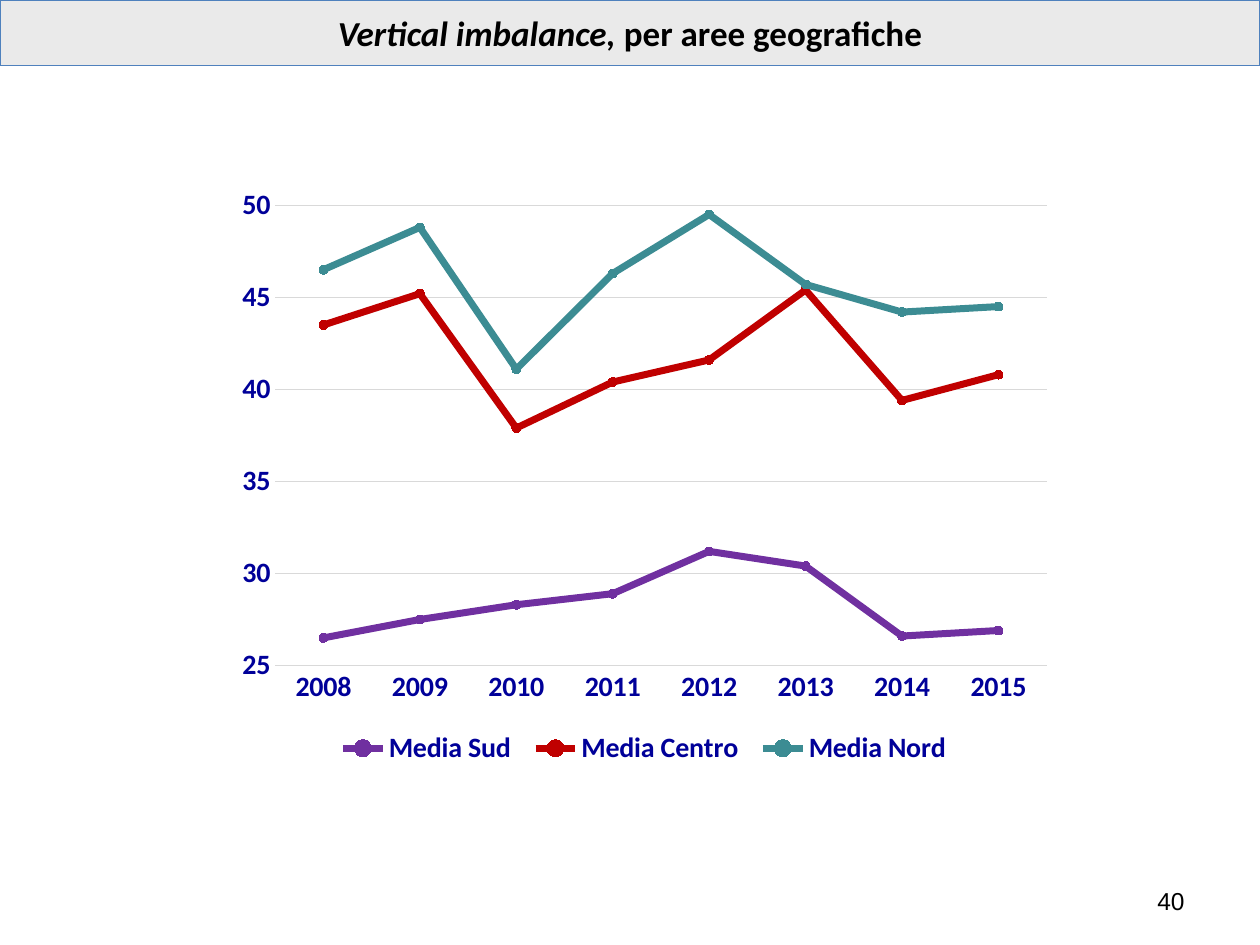
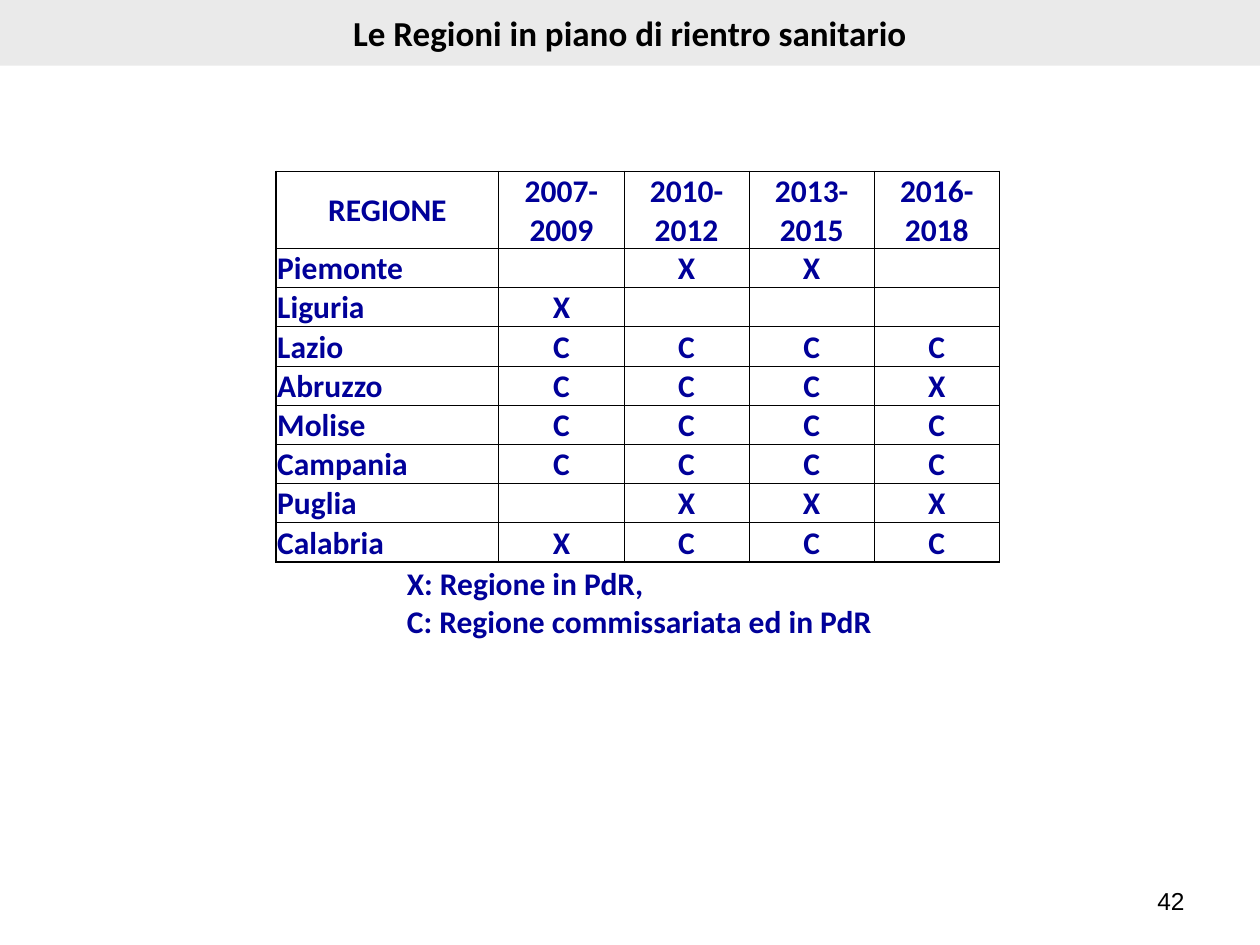
from dataclasses import dataclass

from lxml import etree
from pptx import Presentation
from pptx.chart.data import CategoryChartData
from pptx.dml.color import RGBColor
from pptx.enum.chart import XL_CHART_TYPE, XL_LEGEND_POSITION, XL_MARKER_STYLE, XL_TICK_MARK
from pptx.enum.shapes import MSO_SHAPE
from pptx.enum.text import MSO_ANCHOR, PP_ALIGN
from pptx.oxml.ns import qn
from pptx.util import Pt

LINE_MARKERS = XL_CHART_TYPE.LINE_MARKERS
LEGEND_BOTTOM = XL_LEGEND_POSITION.BOTTOM
CIRCLE = XL_MARKER_STYLE.CIRCLE
NO_TICK = XL_TICK_MARK.NONE
RECTANGLE = MSO_SHAPE.RECTANGLE
MIDDLE = MSO_ANCHOR.MIDDLE
LEFT, CENTER, RIGHT = PP_ALIGN.LEFT, PP_ALIGN.CENTER, PP_ALIGN.RIGHT


@dataclass(frozen=True)
class Theme:
    black: RGBColor = RGBColor.from_string("000000")
    navy: RGBColor = RGBColor.from_string("000099")
    band: RGBColor = RGBColor.from_string("EAEAEA")
    band_edge: RGBColor = RGBColor.from_string("4F81BD")
    grid: RGBColor = RGBColor.from_string("D9D9D9")
    south: RGBColor = RGBColor.from_string("7030A0")
    centre: RGBColor = RGBColor.from_string("C00000")
    north: RGBColor = RGBColor.from_string("3C8C93")
    body_font: str = "Calibri"
    number_font: str = "Arial"
    title_size: int = 20
    table_size: int = 18
    chart_size: int = 16
    number_size: int = 14


theme = Theme()


def style(font, size, color, name=theme.body_font, bold=True):
    font.name, font.size, font.bold = name, Pt(size), bold
    font.color.rgb = color


def add_framed_slide(prs, title_runs, number):
    """Add a slide with its title band and page number; title_runs holds (text, italic) pairs."""
    s = prs.slides.add_slide(prs.slide_layouts[6])
    band = s.shapes.add_shape(RECTANGLE, 0, 0, prs.slide_width, Pt(37.5))
    band.shadow.inherit = False
    band.fill.solid()
    band.fill.fore_color.rgb = theme.band
    band.line.fill.background()
    tf = band.text_frame
    tf.vertical_anchor = MIDDLE
    p = tf.paragraphs[0]
    p.alignment = CENTER
    for text, italic in title_runs:
        r = p.add_run()
        r.text = text
        style(r.font, theme.title_size, theme.black)
        r.font.italic = italic

    tf = s.shapes.add_textbox(Pt(516), Pt(500.4), Pt(168), Pt(28.8)).text_frame
    tf.word_wrap = True
    tf.vertical_anchor = MIDDLE
    p = tf.paragraphs[0]
    p.text = number
    p.alignment = RIGHT
    style(p.runs[0].font, theme.number_size, theme.black, theme.number_font, False)
    return s, band


prs = Presentation()
prs.slide_width, prs.slide_height = Pt(720), Pt(540)

# Slide 1: line chart by area
s, band = add_framed_slide(
    prs, [("Vertical imbalance, ", True), ("per aree geografiche", False)], "40")
band.line.color.rgb = theme.band_edge
band.line.width = Pt(0.75)

areas = [
    ("Media Sud ", theme.south, (26.5, 27.5, 28.3, 28.9, 31.2, 30.4, 26.6, 26.9)),
    ("Media Centro ", theme.centre, (43.5, 45.2, 37.9, 40.4, 41.6, 45.4, 39.4, 40.8)),
    ("Media Nord", theme.north, (46.5, 48.8, 41.1, 46.3, 49.5, 45.7, 44.2, 44.5)),
]
data = CategoryChartData()
data.categories = [str(year) for year in range(2008, 2016)]
for name, color, values in areas:
    data.add_series(name, values)
chart = s.shapes.add_chart(
    LINE_MARKERS, Pt(128.9), Pt(100.8), Pt(478.8), Pt(339.8), data).chart
style(chart.font, theme.chart_size, theme.navy)
chart.has_title = False
chart.has_legend = True
chart.legend.position = LEGEND_BOTTOM
chart.legend.include_in_layout = False
style(chart.legend.font, theme.chart_size, theme.navy)

for axis in (chart.category_axis, chart.value_axis):
    axis.major_tick_mark = axis.minor_tick_mark = NO_TICK
    style(axis.tick_labels.font, theme.chart_size, theme.navy)
value_axis = chart.value_axis
value_axis.minimum_scale, value_axis.maximum_scale = 25, 50
value_axis.major_unit = 5
value_axis.tick_labels.number_format = "0"
value_axis.tick_labels.number_format_is_linked = False
value_axis.format.line.fill.background()
for line in (chart.category_axis.format.line, value_axis.major_gridlines.format.line):
    line.color.rgb = theme.grid
    line.width = Pt(0.75)

chart.plots[0].vary_by_categories = False
for series, (name, color, values) in zip(chart.plots[0].series, areas):
    series.smooth = False
    series.format.line.color.rgb = color
    series.format.line.width = Pt(4)
    marker = series.marker
    marker.style, marker.size = CIRCLE, 5
    marker.format.fill.solid()
    marker.format.fill.fore_color.rgb = color
    marker.format.line.color.rgb = color

# Slide 2: table of regions
s, band = add_framed_slide(prs, [("Le Regioni in piano di rientro sanitario", False)], "42")

rows = [
    ("REGIONE", "2007-2009", "2010-2012", "2013-2015", "2016-2018"),
    ("Piemonte", "", "X", "X", ""),
    ("Liguria", "X", "", "", ""),
    ("Lazio", "C", "C", "C", "C"),
    ("Abruzzo", "C", "C", "C", "X"),
    ("Molise", "C", "C", "C", "C"),
    ("Campania", "C", "C", "C", "C"),
    ("Puglia", "", "X", "X", "X"),
    ("Calabria", "X", "C", "C", "C"),
]
last_row, last_col = len(rows) - 1, len(rows[0]) - 1
table = s.shapes.add_table(
    len(rows), len(rows[0]), Pt(157.7), Pt(98), Pt(413.4), Pt(222.8)).table
table.first_row = table.horz_banding = False
for i, column in enumerate(table.columns):
    column.width = Pt(71.5 if i else 127.4)
for i, row in enumerate(table.rows):
    row.height = Pt(22.4 if i else 43.6)

for i, row in enumerate(rows):
    for j, text in enumerate(row):
        cell = table.cell(i, j)
        cell.margin_left = cell.margin_right = cell.margin_top = Pt(0.75)
        cell.margin_bottom = 0
        cell.vertical_anchor = MIDDLE
        p = cell.text_frame.paragraphs[0]
        p.alignment = LEFT if i and not j else CENTER
        if text:
            p.text = text
            style(p.runs[0].font, theme.table_size, theme.navy)
        tc_pr = cell._tc.get_or_add_tcPr()
        outer_edges = (("a:lnL", j == 0), ("a:lnR", j == last_col),
                       ("a:lnT", i == 0), ("a:lnB", i == last_row))
        for tag, outer in outer_edges:
            ln = etree.SubElement(tc_pr, qn(tag), w=str(Pt(1 if outer else 0.5)))
            fill = etree.SubElement(ln, qn("a:solidFill"))
            etree.SubElement(fill, qn("a:srgbClr"), val=str(theme.black))
        cell.fill.background()

tf = s.shapes.add_textbox(Pt(225.4), Pt(319), Pt(286.6), Pt(51)).text_frame
tf.word_wrap = False
tf.text = "X: Regione in PdR,\nC: Regione commissariata ed in PdR"
for p in tf.paragraphs:
    style(p.runs[0].font, theme.table_size, theme.navy)

prs.save("out.pptx")
